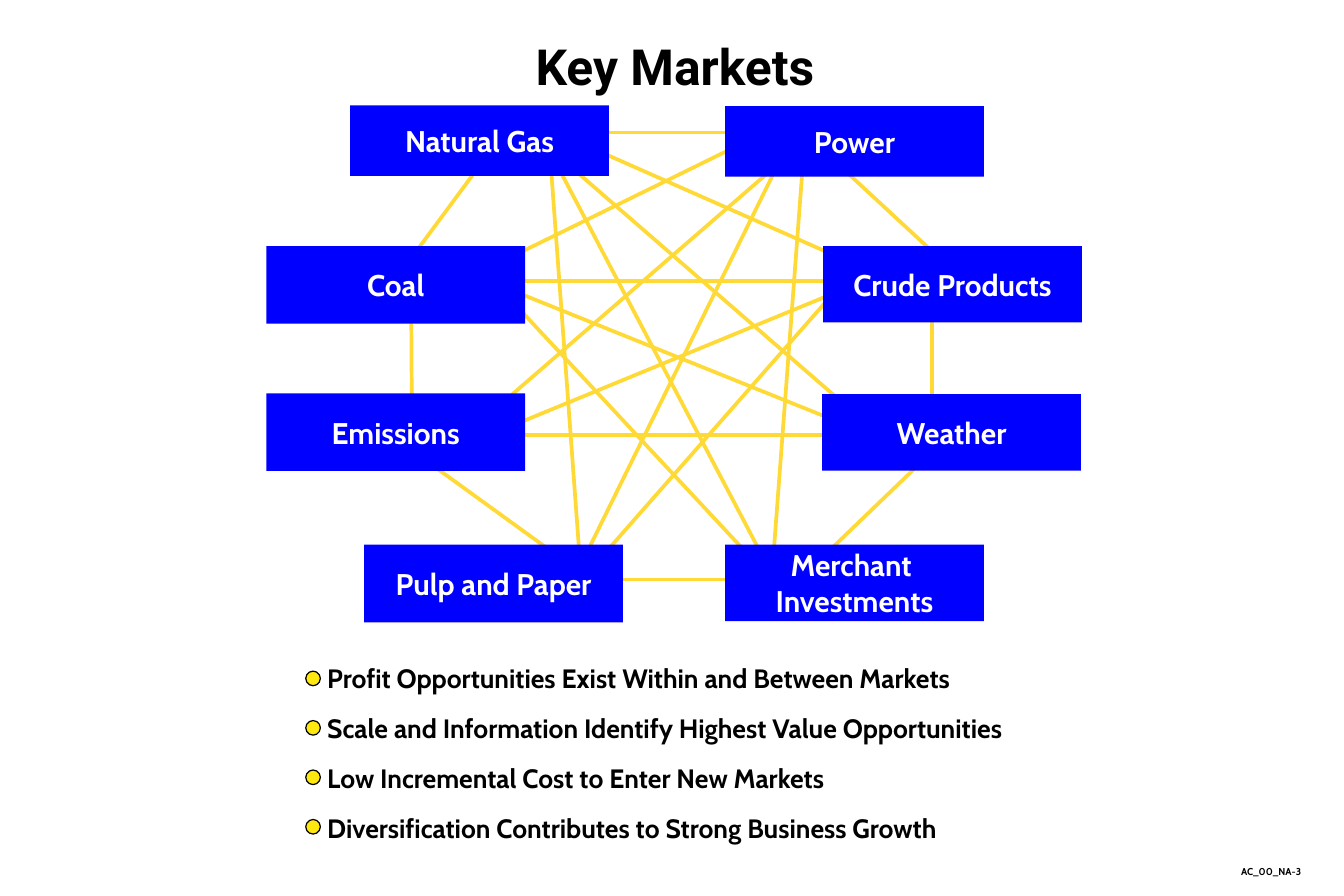
from typing import NamedTuple

from lxml.etree import SubElement
from pptx import Presentation
from pptx.dml.color import RGBColor
from pptx.enum.shapes import MSO_CONNECTOR as Connector, MSO_SHAPE as Preset
from pptx.enum.text import MSO_ANCHOR as Anchor, MSO_AUTO_SIZE as AutoSize, PP_ALIGN as Align
from pptx.oxml.ns import qn
from pptx.util import Pt

BLACK, WHITE, BLUE, GOLD, YELLOW = "000000", "FFFFFF", "0000FF", "FFD935", "FFE80F"
MARKET_WIDTH = 156


class Market(NamedTuple):
    name: str
    left: float
    top: float
    height: float


class Link(NamedTuple):
    x1: float
    y1: float
    x2: float
    y2: float


MARKETS = [
    Market("Natural Gas", 211, 63.5, 42.5),
    Market("Power", 437, 64, 42.5),
    Market("Coal", 160.5, 148.3, 46.8),
    Market("Crude Products", 496, 148.3, 46),
    Market("Emissions", 160.5, 237, 46.8),
    Market("Weather", 495.5, 237.6, 46),
    Market("Pulp and Paper", 219.5, 328.3, 46.8),
    Market("Merchant \nInvestments", 437, 328.3, 46),
]

LINKS = [
    Link(479.5, 351.4, 556.6, 277.2),
    Link(337.7, 336.2, 256.3, 277.2),
    Link(484.6, 89.3, 466.6, 329),
    Link(510.5, 173.5, 298.8, 260.6),
    Link(459.4, 80.6, 305.3, 156.2),
    Link(493.9, 88.6, 563, 152.6),
    Link(331.2, 89.3, 349.2, 334.1),
    Link(472.3, 92.2, 351.4, 337.7),
    Link(331.9, 92.2, 460.8, 337.7),
    Link(498.2, 181.4, 361.4, 337),
    Link(313.2, 186.5, 461.5, 345.6),
    Link(283.7, 262.1, 534.2, 262.1),
    Link(470.9, 97.2, 293, 251.3),
    Link(348.5, 104.4, 517.7, 251.3),
    Link(279.4, 169.2, 529.9, 169.2),
    Link(303.1, 172.8, 514.1, 257.8),
    Link(337, 80.6, 501.8, 153.4),
    Link(299.5, 85.7, 248.4, 154.8),
    Link(247.7, 160.6, 248.4, 280.8),
    Link(561.6, 164.2, 561.6, 276.5),
    Link(342, 79.9, 467.3, 79.9),
    Link(283.7, 349.2, 534.2, 349.2),
]

BENEFITS = [
    "Profit Opportunities Exist Within and Between Markets",
    "Scale and Information Identify Highest Value Opportunities",
    "Low Incremental Cost to Enter New Markets",
    "Diversification Contributes to Strong Business Growth",
]


def paint(color_format, color: str) -> None:
    """Give a fill's or font's colour a hex value."""
    color_format.rgb = RGBColor.from_string(color)


def place(shape, left: float, top: float, width: float, height: float) -> None:
    shape.left, shape.top = Pt(left), Pt(top)
    shape.width, shape.height = Pt(width), Pt(height)


def write(shape, text: str, *, size: float, color: str = BLACK, font: str = "Cabin",
          align=Align.LEFT, anchor=Anchor.TOP, wrap: bool = True,
          spacing: float = 1.0, before: float = 0) -> None:
    """Fill a shape with bold text, one paragraph per line."""
    frame = shape.text_frame
    frame.text = text
    frame.word_wrap, frame.auto_size = wrap, AutoSize.NONE
    frame.vertical_anchor = anchor
    frame.margin_left = frame.margin_right = Pt(7.2)
    frame.margin_top = frame.margin_bottom = Pt(3.6)
    for paragraph in frame.paragraphs:
        paragraph.alignment = align
        paragraph.line_spacing, paragraph.space_before = spacing, Pt(before)
        for run in paragraph.runs:
            run.font.name, run.font.size, run.font.bold = font, Pt(size), True
            paint(run.font.color, color)


def remove_bullets(shape) -> None:
    for paragraph in shape.text_frame.paragraphs:
        properties = paragraph._p.get_or_add_pPr()
        properties.set("marL", "0")
        properties.set("indent", "0")
        SubElement(properties, qn("a:buNone"))


def add_filled(slide, preset, left: float, top: float, width: float, height: float, color: str):
    shape = slide.shapes.add_shape(preset, Pt(left), Pt(top), Pt(width), Pt(height))
    shape.shadow.inherit = False
    shape.fill.solid()
    paint(shape.fill.fore_color, color)
    shape.line.fill.background()
    return shape


def add_link(slide, link: Link) -> None:
    connector = slide.shapes.add_connector(Connector.STRAIGHT, *map(Pt, link))
    connector.line.width = Pt(2.25)
    paint(connector.line.color, GOLD)
    SubElement(connector._element.spPr, qn("a:effectLst"))


def add_market(slide, market: Market) -> None:
    box = add_filled(slide, Preset.RECTANGLE, market.left, market.top,
                     MARKET_WIDTH, market.height, BLUE)
    write(box, market.name, size=18, color=WHITE, align=Align.CENTER,
          anchor=Anchor.MIDDLE, wrap=False)


def add_marker(slide, top: float) -> None:
    marker = add_filled(slide, Preset.OVAL, 184.3, top, 8.8, 8.8, YELLOW)
    marker.line.width = Pt(0.75)
    paint(marker.line.color, BLACK)


def main() -> None:
    deck = Presentation()
    deck.slide_width, deck.slide_height = Pt(810), Pt(540)
    slide = deck.slides.add_slide(deck.slide_layouts[1])

    title, benefits = slide.placeholders
    place(title, 28.8, 18, 756, 43.2)
    write(title, "Key Markets", size=30, font="Roboto", align=Align.CENTER)

    place(benefits, 190, 394.5, 620, 118)
    write(benefits, "\n".join(BENEFITS), size=16, spacing=1.05, before=10)
    remove_bullets(benefits)
    for row in range(len(BENEFITS)):
        add_marker(slide, 404.5 + 29.8 * row)

    for link in LINKS:
        add_link(slide, link)
    for market in MARKETS:
        add_market(slide, market)

    page_code = slide.shapes.add_textbox(Pt(702), Pt(518.4), Pt(89.3), Pt(14.4))
    write(page_code, "AC_00_NA-3", size=6, align=Align.RIGHT)

    deck.save("out.pptx")


if __name__ == "__main__":
    main()
